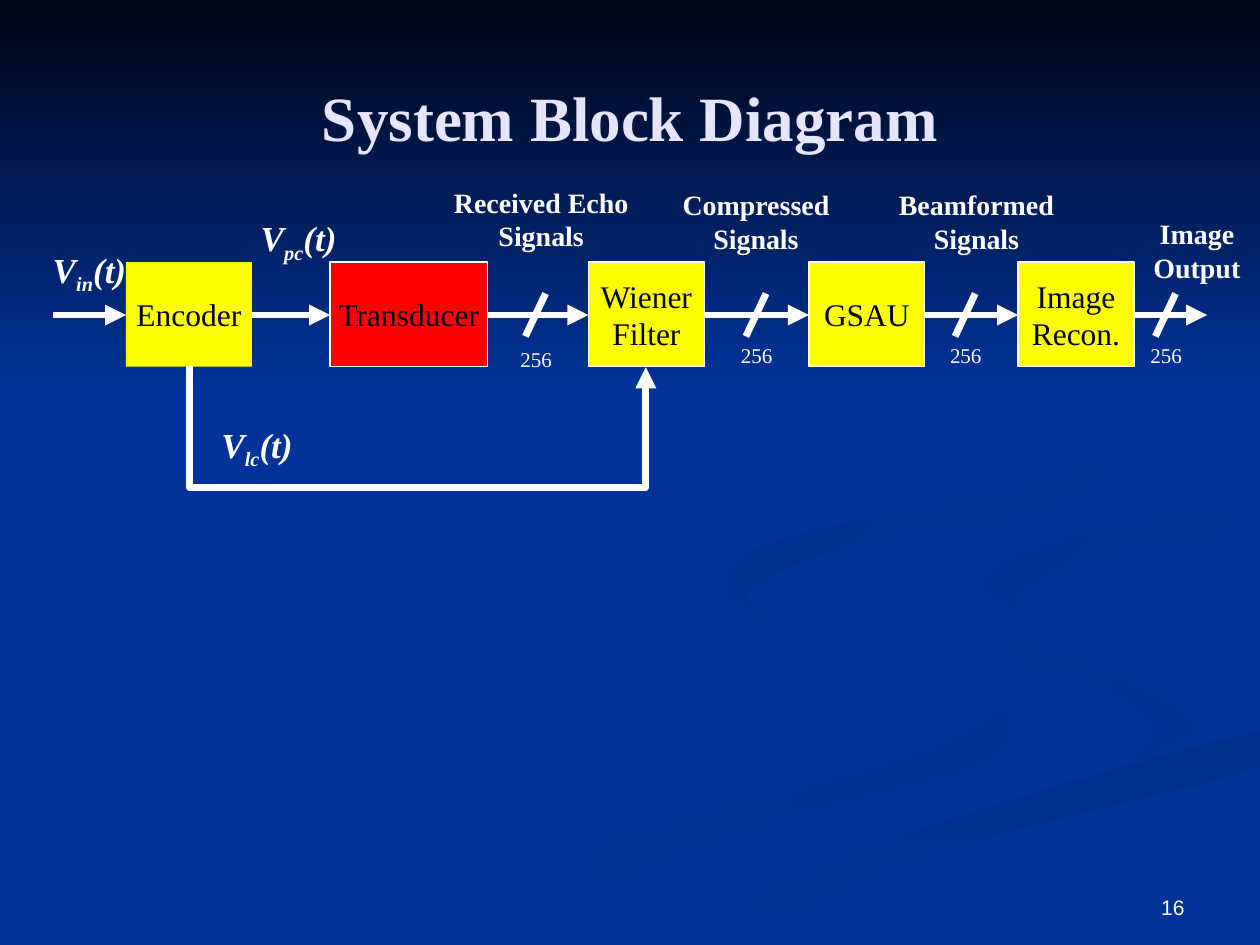
"""Build the system block diagram slide."""
from dataclasses import dataclass
from itertools import pairwise

from lxml.etree import SubElement
from pptx import Presentation
from pptx.dml.color import RGBColor
from pptx.enum.shapes import MSO_CONNECTOR, MSO_SHAPE
from pptx.enum.text import MSO_ANCHOR, PP_ALIGN
from pptx.oxml.ns import qn
from pptx.util import Inches, Pt

NAVY = RGBColor(0x00, 0x33, 0x99)
NIGHT = RGBColor(0x00, 0x05, 0x14)
DEEP = RGBColor(0x00, 0x2F, 0x8C)
SHADE = RGBColor(0x00, 0x31, 0x93)
WHITE = RGBColor(0xFF, 0xFF, 0xFF)
LAVENDER = RGBColor(0xE5, 0xE5, 0xFF)
YELLOW = RGBColor(0xFF, 0xFF, 0x00)
RED = RGBColor(0xFF, 0x00, 0x00)
SERIF = "Times New Roman"
AXIS_Y = 2.5
BOX_TOP, BOX_HEIGHT = 2.08, 0.83
SMOOTH_STEPS = 6


@dataclass
class Ribbon:
    """Background band with its outline in hundredths of an inch."""
    start: RGBColor
    end: RGBColor
    angle: int
    points: list[tuple[int, int]]


@dataclass
class Block:
    """Processing stage on the signal axis."""
    lines: list[str]
    left: float
    width: float = 0.92
    fill: RGBColor = YELLOW
    outlined: bool = True


@dataclass
class Label:
    """Centred caption above a signal."""
    text: str
    left: float
    top: float
    width: float


@dataclass
class Voltage:
    """Signal name with a subscript."""
    subscript: str
    left: float
    top: float
    width: float


@dataclass
class Bus:
    """Slash across an arrow with the channel count below it."""
    x: float
    count_top: float = 2.67


RIBBONS = [
    Ribbon(NAVY, SHADE, 0, [
        (781, 553), (682, 519), (594, 485), (575, 459), (581, 484), (679, 519), (776, 553),
        (783, 574), (684, 613), (458, 674), (300, 749), (361, 749), (564, 665), (756, 614),
        (800, 581)]),
    Ribbon(NAVY, SHADE, 45, [
        (943, 570), (870, 530), (758, 498), (724, 464), (755, 505), (880, 549), (917, 580),
        (894, 605), (932, 589)]),
    Ribbon(DEEP, NAVY, 90, [
        (503, 749), (571, 749), (722, 682), (998, 609), (998, 581), (764, 647), (569, 719)]),
    Ribbon(SHADE, NAVY, 45, [
        (781, 460), (826, 496), (805, 472), (878, 439), (998, 420), (998, 402), (849, 427)]),
    Ribbon(DEEP, NAVY, 45, [
        (683, 430), (825, 402), (894, 344), (843, 275), (762, 233), (846, 279), (889, 335),
        (842, 378), (625, 426), (577, 462), (622, 500), (593, 470)]),
]
BLOCKS = [
    Block(["Encoder"], 1, 1, outlined=False),
    Block(["Transducer"], 2.62, 1.25, RED),
    Block(["Wiener", "Filter"], 4.67),
    Block(["GSAU"], 6.42),
    Block(["Image", "Recon."], 8.08),
]
LABELS = [
    Label("Received Echo Signals", 3.42, 1.42, 1.75),
    Label("Compressed Signals", 5.25, 1.44, 1.5),
    Label("Beamformed Signals", 7, 1.44, 1.5),
    Label("Image Output", 9, 1.67, 1),
]
VOLTAGES = [
    Voltage("in", -0.08, 1.92, 1.58),
    Voltage("pc", 1.58, 1.67, 1.58),
    Voltage("lc", 1.58, 3.31, 0.92),
]
BUSES = [Bus(4.17, 2.7), Bus(5.92), Bus(7.58), Bus(9.17)]


def add_run(p, text: str, size: float, color=WHITE, font=SERIF, bold=False, italic=False):
    """Append a formatted run to a paragraph."""
    r = p.add_run()
    r.text = text
    r.font.size, r.font.name, r.font.color.rgb = Pt(size), font, color
    r.font.bold, r.font.italic = bold, italic
    return r


def add_text_box(s, left: float, top: float, width: float, height: float, align=PP_ALIGN.CENTER):
    """Add a wrapping text box and return its first paragraph."""
    tf = s.shapes.add_textbox(*map(Inches, (left, top, width, height))).text_frame
    tf.word_wrap = True
    tf.paragraphs[0].alignment = align
    return tf.paragraphs[0]


def smooth_outline(points: list[tuple[int, int]]) -> list[tuple[float, float]]:
    """Interpolate a closed Catmull-Rom curve, kept within the slide."""
    outline = []
    for i in range(len(points)):
        corners = [points[(i + k) % len(points)] for k in (-1, 0, 1, 2)]
        for step in range(SMOOTH_STEPS):
            t = step / SMOOTH_STEPS
            x, y = (b + t / 2 * (c - a + t * (2 * a - 5 * b + 4 * c - d
                                              + t * (3 * b - a - 3 * c + d)))
                    for a, b, c, d in zip(*corners))
            outline.append((min(x, 1000), min(y, 750)))
    return outline


def fill_gradient(sp, start: RGBColor, end: RGBColor, angle: int) -> None:
    """Give a borderless shape a two-colour clockwise gradient."""
    sp.shadow.inherit = False
    sp.line.fill.background()
    sp.fill.gradient()
    sp.fill.gradient_angle = -angle % 360
    for stop, color in zip(sp.fill.gradient_stops, (start, end)):
        stop.color.rgb = color


def add_ribbon(s, ribbon: Ribbon) -> None:
    """Draw one gradient band."""
    outline = smooth_outline(ribbon.points)
    builder = s.shapes.build_freeform(*outline[0], scale=Inches(0.01))
    builder.add_line_segments(outline[1:], close=True)
    fill_gradient(builder.convert_to_shape(), ribbon.start, ribbon.end, ribbon.angle)


def add_block(s, block: Block) -> None:
    """Draw one processing stage."""
    sp = s.shapes.add_shape(MSO_SHAPE.RECTANGLE,
                            *map(Inches, (block.left, BOX_TOP, block.width, BOX_HEIGHT)))
    sp.shadow.inherit = False
    sp.fill.solid()
    sp.fill.fore_color.rgb = block.fill
    if block.outlined:
        sp.line.color.rgb, sp.line.width = WHITE, Pt(0.75)
    else:
        sp.line.fill.background()
    tf = sp.text_frame
    tf.word_wrap, tf.vertical_anchor = False, MSO_ANCHOR.MIDDLE
    for i, line in enumerate(block.lines):
        p = tf.add_paragraph() if i else tf.paragraphs[0]
        p.alignment = PP_ALIGN.CENTER
        add_run(p, line, 18, NIGHT)


def add_line(s, x1: float, y1: float, x2: float, y2: float, arrow=True, kind=MSO_CONNECTOR.STRAIGHT):
    """Draw a thick white connector."""
    c = s.shapes.add_connector(kind, *map(Inches, (x1, y1, x2, y2)))
    c.line.color.rgb, c.line.width = WHITE, Pt(4)
    if arrow:
        SubElement(c.element.spPr.find(qn("a:ln")), qn("a:tailEnd"), type="triangle")
    SubElement(c.element.spPr, qn("a:effectLst"))
    return c


def add_feedback(s) -> None:
    """Draw the U-shaped arrow from the encoder to the filter."""
    c = add_line(s, 3.31, 1.1, 3.32, 4.72, kind=MSO_CONNECTOR.ELBOW)
    xfrm = c.element.spPr.find(qn("a:xfrm"))
    xfrm.set("rot", "16200000")
    xfrm.set("flipH", "1")
    geom = c.element.spPr.find(qn("a:prstGeom"))
    guides = geom.find(qn("a:avLst"))
    if guides is None:
        guides = SubElement(geom, qn("a:avLst"))
    SubElement(guides, qn("a:gd"), name="adj1", fmla="val 9800000")


def main() -> None:
    """Build and save the slide."""
    prs = Presentation()
    prs.slide_width, prs.slide_height = Inches(10), Inches(7.5)
    s = prs.slides.add_slide(prs.slide_layouts[5])
    s.background.fill.solid()
    s.background.fill.fore_color.rgb = NAVY
    for ribbon in RIBBONS:
        add_ribbon(s, ribbon)
    sky = s.shapes.add_shape(MSO_SHAPE.RECTANGLE, 0, 0, prs.slide_width, Inches(3.08))
    fill_gradient(sky, NIGHT, NAVY, 90)

    title = s.shapes.title
    title.element.getparent().append(title.element)
    title.left, title.top, title.width, title.height = map(Inches, (0.5, 0.3, 9, 1.25))
    title.text_frame.vertical_anchor = MSO_ANCHOR.MIDDLE
    p = title.text_frame.paragraphs[0]
    p.alignment = PP_ALIGN.CENTER
    add_run(p, "System Block Diagram", 36, LAVENDER, bold=True)
    add_run(add_text_box(s, 7.17, 7.05, 2.33, 0.3, PP_ALIGN.RIGHT), "16", 12, font="Arial")

    for block in BLOCKS:
        add_block(s, block)
    for label in LABELS:
        p = add_text_box(s, label.left, label.top, label.width, 0.64)
        add_run(p, label.text, 16, bold=True)
    for v in VOLTAGES:
        p = add_text_box(s, v.left, v.top, v.width, 0.44)
        for text in ("V", v.subscript, "(t)"):
            r = add_run(p, text, 20, bold=True, italic=True)
            if text == v.subscript:
                r._r.get_or_add_rPr().set("baseline", "-25000")
    for bus in BUSES:
        add_line(s, bus.x, 2.67, bus.x + 0.16, 2.33, arrow=False)
        add_run(add_text_box(s, bus.x - 0.25, bus.count_top, 0.67, 0.3), "256", 12)

    add_feedback(s)
    stops = [(0, 0.42), *((b.left, b.left + b.width) for b in BLOCKS), (9.58, 10)]
    for (_, start), (end, _) in pairwise(stops):
        add_line(s, start, AXIS_Y, end, AXIS_Y)
    prs.save("out.pptx")


if __name__ == "__main__":
    main()
